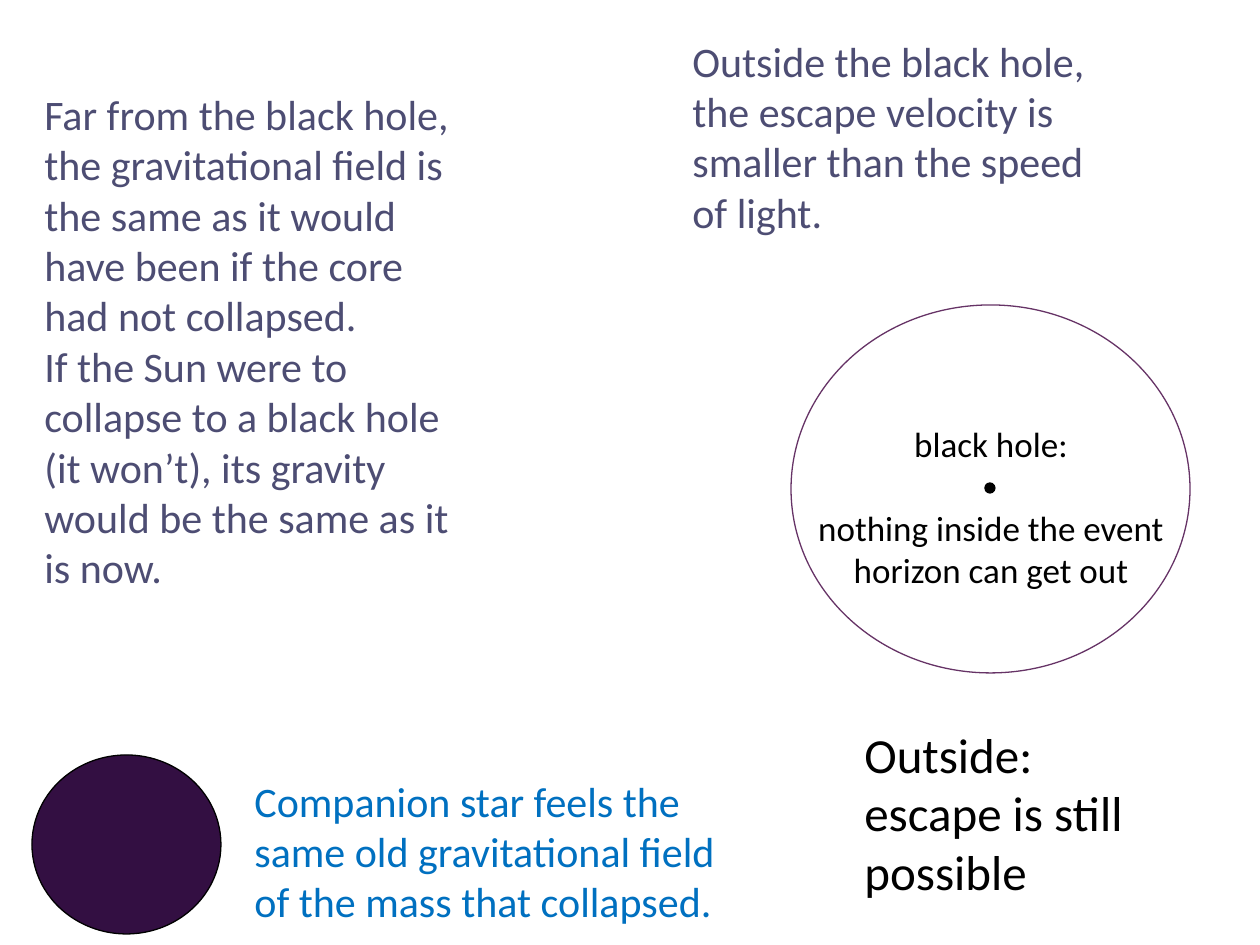
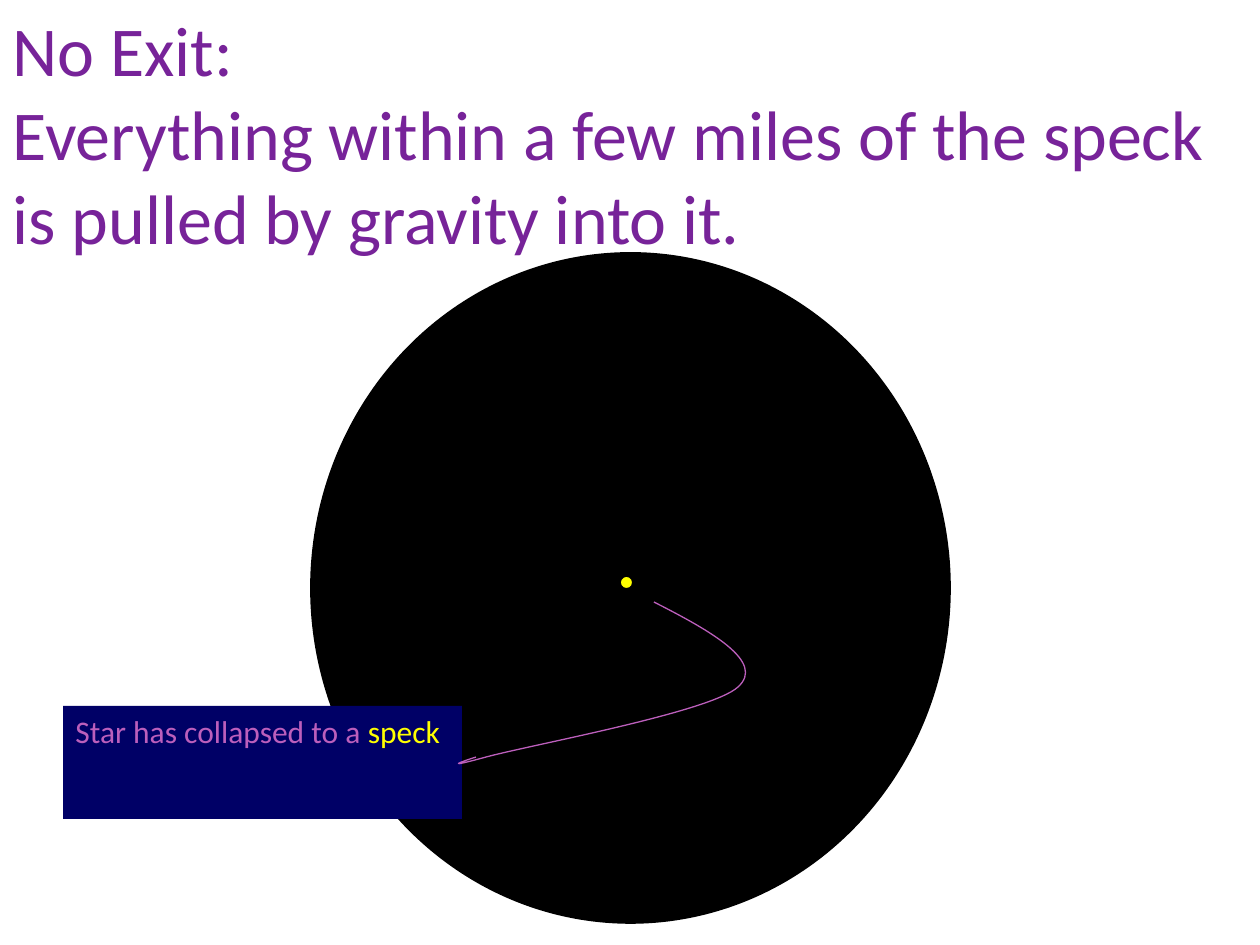
import pptx
import pptx.util
import pptx.dml.color
import pptx.enum.shapes
import pptx.enum.text
import pptx.oxml
from dataclasses import dataclass

PX = 914400 / 126  # EMU in one px
OVAL = pptx.enum.shapes.MSO_SHAPE.OVAL
RECT = pptx.enum.shapes.MSO_SHAPE.RECTANGLE
ALIGN = pptx.enum.text.PP_ALIGN


@dataclass(frozen=True)
class Theme:
    font: str = "Calibri"
    black: str = "000000"
    slate: str = "4D4D73"
    plum: str = "330F42"
    ring: str = "663366"
    blue: str = "0070C0"
    navy: str = "000066"
    pink: str = "BC5FBC"
    yellow: str = "FFFF00"
    violet: str = "772399"
    title: int = 40
    large: int = 28
    body: int = 24
    note: int = 20
    label: int = 18
    thin: float = 0.75
    edge: float = 1


T = Theme()


def emu(*vals):
    return [round(v * PX) for v in vals]


def rgb(code):
    return pptx.dml.color.RGBColor.from_string(code)


def inset(box, x, y, w, h):
    """Box placed by its offset from the corner of another box."""
    return box[0] + x, box[1] + y, w, h


# Shared parts

def write(shape, paras, size, color, align=ALIGN.LEFT, gap=0):
    """Each paragraph is a list of (text, colour or None) runs."""
    frame = shape.text_frame
    form = {"word_wrap": True,
            "auto_size": pptx.enum.text.MSO_AUTO_SIZE.NONE,
            "vertical_anchor": pptx.enum.text.MSO_ANCHOR.TOP}
    for name, value in form.items():
        setattr(frame, name, value)
    for i, parts in enumerate(paras):
        para = frame.add_paragraph() if i else frame.paragraphs[0]
        para.alignment = align
        para.space_before = pptx.util.Pt(gap if i else 0)
        for text, tint in parts:
            run = para.add_run()
            run.text = text
            for name, value in {"name": T.font, "size": pptx.util.Pt(size)}.items():
                setattr(run.font, name, value)
            run.font.color.rgb = rgb(tint or color)


def note(shapes, box, lines, size, color, **form):
    area = shapes.add_textbox(*emu(*box))
    write(area, [[(line, None)] for line in lines], size, color, **form)


def paint(shape, fill=None, line=None, width=T.thin):
    shape.shadow.inherit = False
    if fill:
        shape.fill.solid()
        shape.fill.fore_color.rgb = rgb(fill)
    else:
        shape.fill.background()
    if line:
        shape.line.color.rgb = rgb(line)
        shape.line.width = pptx.util.Pt(width)
    else:
        shape.line.fill.background()


def draw(shapes, kind, box, **look):
    shape = shapes.add_shape(kind, *emu(*box))
    paint(shape, **look)
    return shape


def curve(shapes, points, **look):
    """Smooth path: a start point, then three points per cubic segment."""
    pts = [emu(*p) for p in points]
    pen = shapes.build_freeform(*pts[0])
    pen.add_line_segments(pts[1:], close=False)
    shape = pen.convert_to_shape()
    qn = pptx.oxml.ns.qn
    route = next(shape._element.iter(qn("a:path")))
    steps = route.findall(qn("a:lnTo"))
    for i in range(0, len(steps), 3):
        bend = route.makeelement(qn("a:cubicBezTo"), {})
        route.append(bend)
        for step in steps[i:i + 3]:
            bend.append(step[0])
            route.remove(step)
    paint(shape, **look)


# Slide 1 regions

def horizon(shapes, box):
    note(shapes, inset(box, -5, 111, 410, 183),
         ["black hole:", "nothing inside the event horizon can get out"],
         T.note, T.black, align=ALIGN.CENTER, gap=24.4)
    draw(shapes, OVAL, inset(box, 194, 178, 10, 10), fill=T.black, line=T.black)
    draw(shapes, OVAL, box, line=T.ring)


def star(shapes, box):
    draw(shapes, OVAL, inset(box, 0, 0, 189, 179), fill=T.plum, line=T.black)
    note(shapes, inset(box, 210, 14, 525, 165),
         ["Companion star feels the same old gravitational field of the mass "
          "that collapsed."], T.body, T.blue)


def fields(deck):
    shapes = deck.slides.add_slide(deck.slide_layouts[6]).shapes
    horizon(shapes, (791, 305, 399, 368))
    note(shapes, (680, 29, 441, 217),
         ["Outside the black hole, the escape velocity is smaller than the "
          "speed of light."], T.body, T.slate)
    note(shapes, (32, 82, 441, 572),
         ["Far from the black hole, the gravitational field is the same as it "
          "would have been if the core had not collapsed.",
          "If the Sun were to collapse to a black hole (it won’t), its gravity "
          "would be the same as it is now."], T.body, T.slate)
    star(shapes, (32, 755, 735, 179))
    note(shapes, (852, 718, 334, 190),
         ["Outside: escape is still possible"], T.large, T.black)


# Slide 2 regions

def hole(shapes, box):
    draw(shapes, OVAL, box, fill=T.black, line=T.black, width=T.edge)


def callout(shapes, box):
    group = shapes.add_group_shape().shapes
    tag = draw(group, RECT, box, fill=T.navy)
    write(tag, [[("Star has collapsed to a ", None), ("speck", T.yellow)]],
          T.label, T.pink)
    trail = [(591, -104), (648, -75), (703, -44), (675, -19), (648, 6),
             (467, 39), (423, 51), (379, 63), (397, 56), (413, 51)]
    curve(group, [(box[0] + x, box[1] + y) for x, y in trail], line=T.pink)


def speck(shapes, box):
    draw(shapes, OVAL, inset(box, 309, 323, 13, 13),
         fill=T.yellow, line=T.black, width=T.edge)


def heading(shapes, box):
    title = shapes.title
    for name, value in zip(("left", "top", "width", "height"), emu(*box)):
        setattr(title, name, value)
    lines = ["No Exit:", "Everything within a few miles of the speck is pulled "
             "by gravity into it."]
    write(title, [[(line, None)] for line in lines], T.title, T.violet)


def trap(deck):
    shapes = deck.slides.add_slide(deck.slide_layouts[5]).shapes
    disc = (311, 253, 639, 670)
    hole(shapes, disc)
    callout(shapes, (63, 706, 399, 113))
    speck(shapes, disc)
    heading(shapes, (0, 0, 1260, 265))


def main():
    deck = pptx.Presentation()
    deck.slide_width, deck.slide_height = emu(1260, 945)
    fields(deck)
    trap(deck)
    deck.save("out.pptx")


if __name__ == "__main__":
    main()
